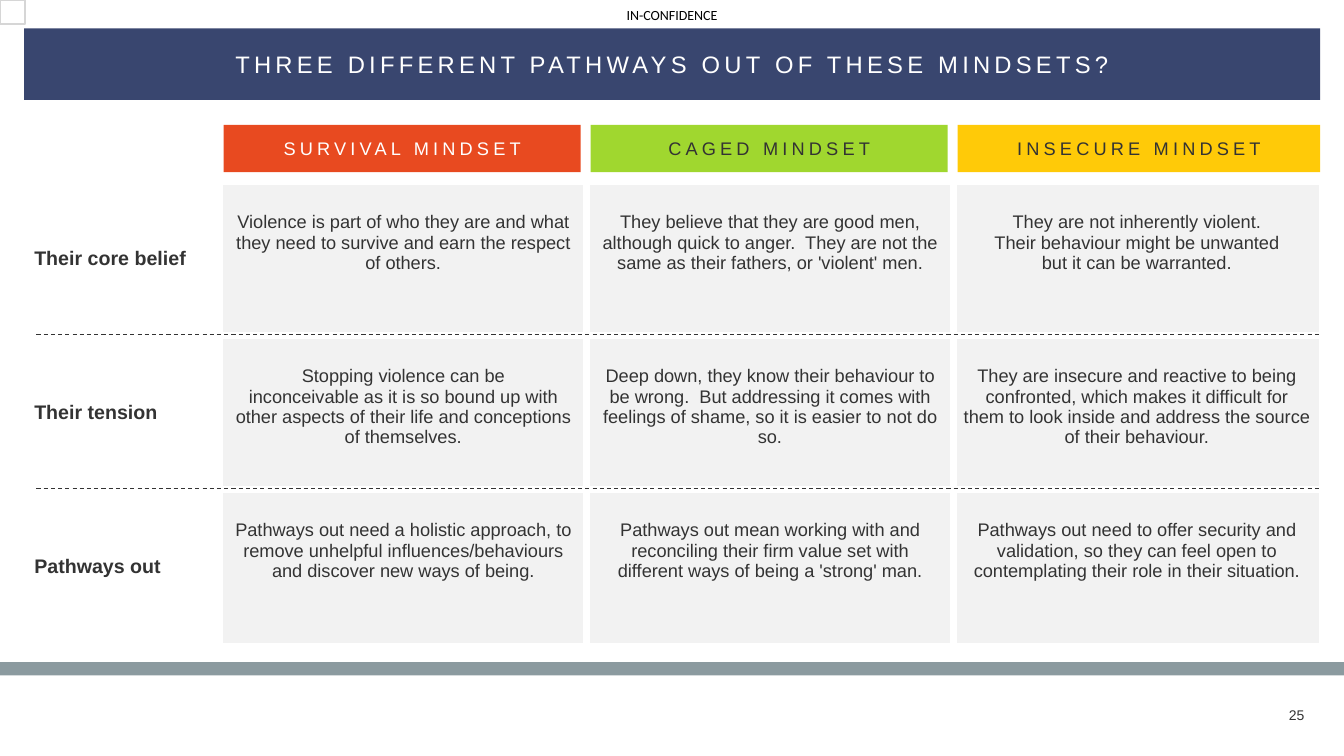
from lxml.etree import SubElement
from pptx import Presentation
from pptx.dml.color import RGBColor
from pptx.enum.dml import MSO_LINE
from pptx.enum.shapes import MSO_CONNECTOR, MSO_SHAPE
from pptx.enum.text import MSO_ANCHOR, MSO_AUTO_SIZE, PP_ALIGN
from pptx.oxml.ns import qn
from pptx.util import Pt

COLORS = {
    "white": "FFFFFF", "black": "000000", "ink": "333333", "navy": "39466F",
    "red": "E84A20", "green": "A0D72F", "yellow": "FFCA08",
    "panel": "F2F2F2", "band": "8B9A9F", "outline": "D6D6D6",
}


def rgb(name):
    return RGBColor.from_string(COLORS[name])


def write(tf, text, size=13, color="ink", font="Arial", bold=False,
          align=PP_ALIGN.CENTER, anchor=MSO_ANCHOR.MIDDLE, spacing=0,
          margins=(7.2, 3.6, 7.2, 3.6)):
    tf.word_wrap = True
    tf.vertical_anchor = anchor
    tf.margin_left, tf.margin_top, tf.margin_right, tf.margin_bottom = map(Pt, margins)
    p = tf.paragraphs[0]
    p.alignment = align
    for i, line in enumerate(text.split("\n")):
        if i:
            p.add_line_break()
        r = p.add_run()
        r.text = line
        r.font.name, r.font.size, r.font.bold = font, Pt(size), bold
        r.font.color.rgb = rgb(color)
        if spacing:
            r.font._element.set("spc", str(spacing * 100))


prs = Presentation()
prs.slide_width, prs.slide_height = Pt(960), Pt(540)
s = prs.slides.add_slide(prs.slide_layouts[5])

title = s.shapes.title
title.left, title.top, title.width, title.height = Pt(17.28), Pt(20.2), Pt(925.7), Pt(51.1)
title.fill.solid()
title.fill.fore_color.rgb = rgb("navy")
write(title.text_frame, "THREE DIFFERENT PATHWAYS OUT OF THESE MINDSETS?",
      size=17, color="white", spacing=3)
title.text_frame.auto_size = MSO_AUTO_SIZE.NONE

for text, box, fmt in [
    ("25", (904.3, 503.3, 27.4, 15.1), dict(align=PP_ALIGN.RIGHT)),
    ("IN-CONFIDENCE", (445, 5, 70, 12.2),
     dict(font="Calibri", color="black", anchor=MSO_ANCHOR.TOP)),
]:
    tb = s.shapes.add_textbox(*map(Pt, box))
    write(tb.text_frame, text, size=10, margins=(0, 0, 0, 0), **fmt)

ROWS = [
    ("Their core belief",
     "Violence is part of who they are and what they need to survive and earn the respect of others.",
     "They believe that they are good men, although quick to anger.  They are not the same as their fathers, or 'violent' men.",
     "They are not inherently violent.\nTheir behaviour might be unwanted\nbut it can be warranted."),
    ("Their tension",
     "Stopping violence can be\ninconceivable as it is so bound up with other aspects of their life and conceptions of themselves.",
     "Deep down, they know their behaviour to be wrong.  But addressing it comes with feelings of shame, so it is easier to not do so.",
     "They are insecure and reactive to being confronted, which makes it difficult for them to look inside and address the source of their behaviour."),
    ("Pathways out",
     "Pathways out need a holistic approach, to remove unhelpful influences/behaviours and discover new ways of being.",
     "Pathways out mean working with and reconciling their firm value set with different ways of being a 'strong' man.",
     "Pathways out need to offer security and validation, so they can feel open to contemplating their role in their situation."),
]
grid = s.shapes.add_table(4, 4, Pt(17.28), Pt(83.5), Pt(925.7), Pt(376)).table
grid.first_row = grid.horz_banding = False
for i, width in enumerate([139.7, 262, 262, 262]):
    grid.columns[i].width = Pt(width)
for i, height in enumerate([46, 110, 110, 110]):
    grid.rows[i].height = Pt(height)

for row, texts in enumerate([("",) * 4] + ROWS):
    for col, text in enumerate(texts):
        cell = grid.cell(row, col)
        tcPr = cell._tc.get_or_add_tcPr()
        edges = {"L": col == 0, "R": col == 3, "T": row == 0, "B": row == 3}
        for side, outer in edges.items():
            ln = SubElement(tcPr, qn("a:ln" + side), w=str(Pt(1 if outer else 6)))
            fill = SubElement(ln, qn("a:solidFill"))
            SubElement(fill, qn("a:srgbClr"), val=COLORS["white"])
        cell.fill.solid()
        cell.fill.fore_color.rgb = rgb("panel" if row and col else "white")
        if not text:
            continue
        if col:
            cell.margin_top = Pt(22.3)
            fmt = dict(anchor=MSO_ANCHOR.TOP, margins=(7.2, 22.3, 7.2, 3.6))
        else:
            fmt = dict(size=14, bold=True, align=PP_ALIGN.LEFT)
        write(cell.text_frame, text, **fmt)
        cell.vertical_anchor = fmt.get("anchor", MSO_ANCHOR.MIDDLE)

for text, left, top, width, height, fill, color, line in [
    ("", 0, 473, 960, 9.4, "band", "ink", None),
    ("SURVIVAL MINDSET", 159.8, 89.3, 255, 33.8, "red", "white", None),
    ("CAGED MINDSET", 421.9, 89.3, 255, 33.8, "green", "ink", None),
    ("INSECURE MINDSET", 684, 89.3, 259, 33.8, "yellow", "ink", None),
    ("", 0, 0, 18, 17.3, "white", "ink", "outline"),
]:
    sp = s.shapes.add_shape(MSO_SHAPE.RECTANGLE, Pt(left), Pt(top), Pt(width), Pt(height))
    sp.shadow.inherit = False
    sp.fill.solid()
    sp.fill.fore_color.rgb = rgb(fill)
    if line:
        sp.line.color.rgb = rgb(line)
        sp.line.width = Pt(1)
    else:
        sp.line.fill.background()
    if text:
        write(sp.text_frame, text, color=color, spacing=3)

for y in (238.8, 348.8):
    rule = s.shapes.add_connector(MSO_CONNECTOR.STRAIGHT, Pt(26), Pt(y), Pt(943), Pt(y))
    rule.line.color.rgb = rgb("ink")
    rule.line.width = Pt(0.75)
    rule.line.dash_style = MSO_LINE.DASH
    SubElement(rule._element.spPr, qn("a:effectLst"))

prs.save("out.pptx")
